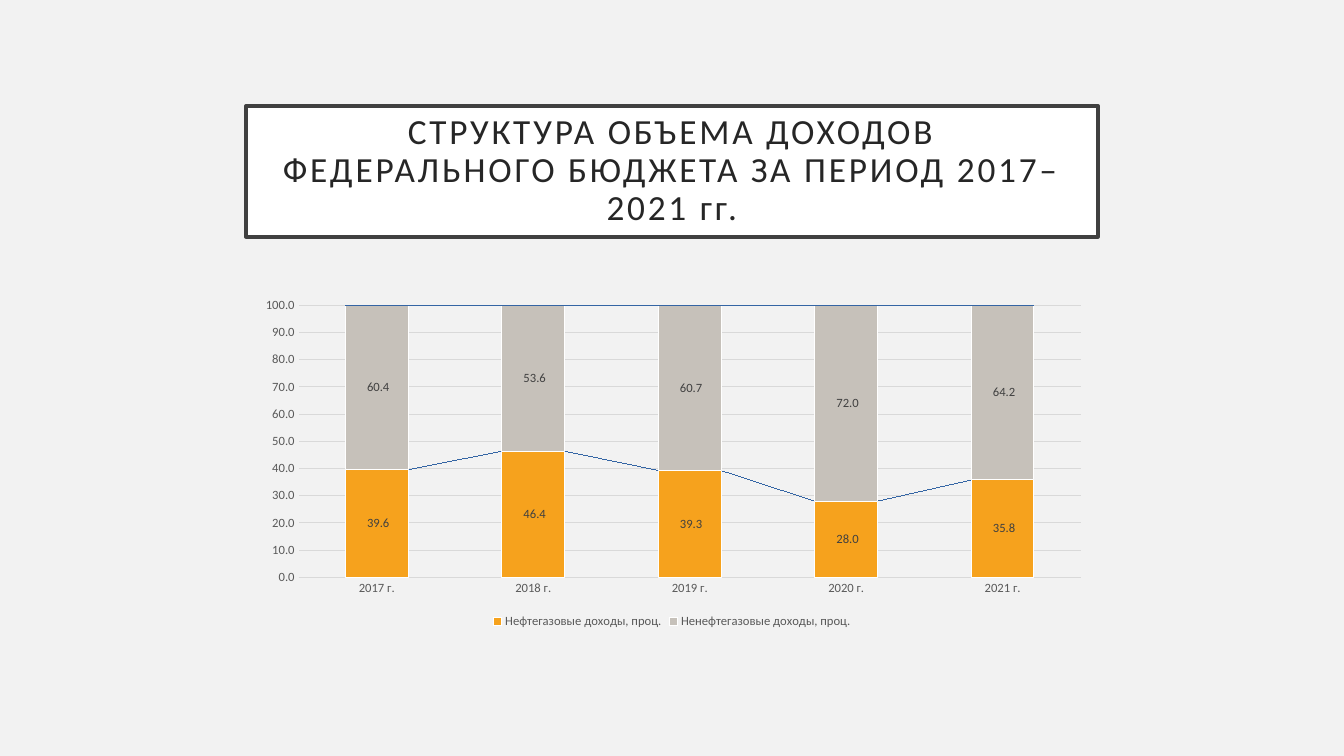
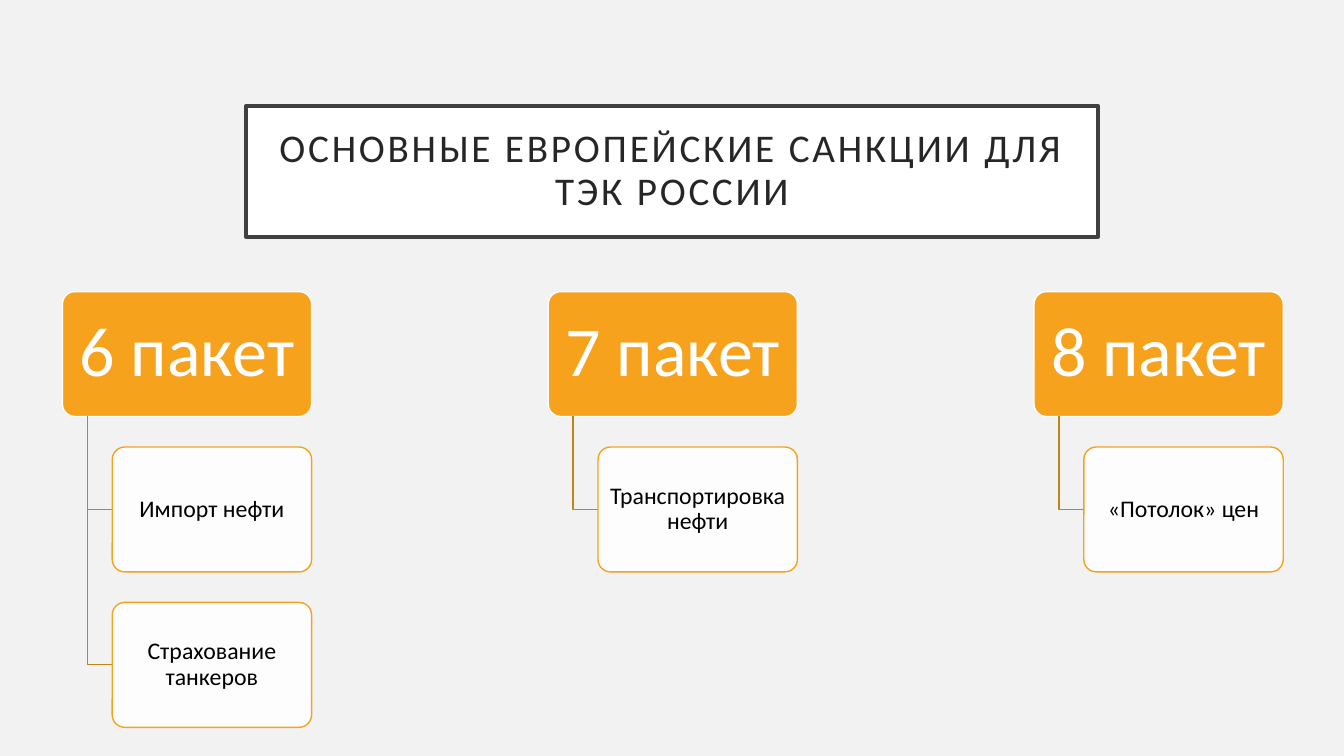
from lxml import etree
from pptx import Presentation
from pptx.chart.data import CategoryChartData
from pptx.dml.color import RGBColor
from pptx.enum.chart import XL_CHART_TYPE, XL_LABEL_POSITION, XL_LEGEND_POSITION, XL_TICK_MARK
from pptx.enum.shapes import MSO_SHAPE
from pptx.enum.text import MSO_ANCHOR, MSO_AUTO_SIZE, PP_ALIGN
from pptx.oxml.ns import qn
from pptx.util import Pt

STACKED = XL_CHART_TYPE.COLUMN_STACKED
LABEL_CENTER = XL_LABEL_POSITION.CENTER
LEGEND_BOTTOM = XL_LEGEND_POSITION.BOTTOM
NO_TICK = XL_TICK_MARK.NONE
ROUNDED = MSO_SHAPE.ROUNDED_RECTANGLE
MIDDLE = MSO_ANCHOR.MIDDLE
NO_AUTOFIT = MSO_AUTO_SIZE.NONE
CENTER = PP_ALIGN.CENTER

TITLE_ONLY = 5
FONT = "Calibri"
BACKGROUND, WHITE, BLACK = "F2F2F2", "FFFFFF", "000000"
ORANGE, STONE, BRANCH = "F6A21D", "C6C1BA", "C58217"
FRAME, TITLE_INK, AXIS_INK, GRID = "404040", "262626", "595959", "D9D9D9"
NUMBER_FORMAT = r"#\ ##0.0"


def rgb(hex_color):
    return RGBColor.from_string(hex_color)


def set_font(font, size, color):
    font.name = FONT
    font.size = Pt(size)
    font.color.rgb = rgb(color)


def set_line(line, color, width):
    line.color.rgb = rgb(color)
    line.width = Pt(width)


def write(shape, text, size, color, inset=(0, 0), tracking=0):
    """Fill the shape with centred text; inset is (horizontal, vertical), all in points."""
    frame = shape.text_frame
    frame.word_wrap = True
    frame.auto_size = NO_AUTOFIT
    frame.vertical_anchor = MIDDLE
    frame.margin_left = frame.margin_right = Pt(inset[0])
    frame.margin_top = frame.margin_bottom = Pt(inset[1])
    paragraph = frame.paragraphs[0]
    paragraph.alignment = CENTER
    paragraph.line_spacing = 0.9
    run = paragraph.add_run()
    run.text = text
    set_font(run.font, size, color)
    if tracking:
        run.font._element.set("spc", str(tracking * 100))


class Deck:
    """Holds the shared style and the slide being built; lengths are in points."""

    def __init__(self):
        self.prs = Presentation()
        self.prs.slide_width, self.prs.slide_height = Pt(960), Pt(540)
        fill = self.prs.slide_master.background.fill
        fill.solid()
        fill.fore_color.rgb = rgb(BACKGROUND)
        self.slide = None

    def add_slide(self, heading, size):
        self.slide = self.prs.slides.add_slide(self.prs.slide_layouts[TITLE_ONLY])
        title = self.slide.shapes.title
        title.left, title.top = Pt(175.7), Pt(75.6)
        title.width, title.height = Pt(608.6), Pt(93.6)
        title.fill.solid()
        title.fill.fore_color.rgb = rgb(WHITE)
        set_line(title.line, FRAME, 2.5)
        write(title, heading, size, TITLE_INK, inset=(14.4, 14.4), tracking=2)

    def card(self, left, top, width, height, fill, outline, opacity=100):
        card = self.slide.shapes.add_shape(ROUNDED, Pt(left), Pt(top), Pt(width), Pt(height))
        card.shadow.inherit = False
        card.adjustments[0] = 0.1
        card.fill.solid()
        card.fill.fore_color.rgb = rgb(fill)
        if opacity < 100:
            color = card.fill._xPr.find(qn("a:solidFill"))[0]
            etree.SubElement(color, qn("a:alpha")).set("val", str(opacity * 1000))
        set_line(card.line, outline, 1)
        return card

    def branch(self, left, top, right, bottom):
        """Draw a line down from (left, top) and then across to (right, bottom)."""
        builder = self.slide.shapes.build_freeform(Pt(left), Pt(top))
        corners = [(Pt(left), Pt(bottom)), (Pt(right), Pt(bottom))]
        builder.add_line_segments(corners, close=False)
        branch = builder.convert_to_shape()
        branch.shadow.inherit = False
        branch.fill.background()
        set_line(branch.line, BRANCH, 1)

    def stacked_chart(self, left, top, width, height, categories, series):
        """Draw shares as stacked columns; series holds (name, values, colour)."""
        data = CategoryChartData(number_format=NUMBER_FORMAT)
        data.categories = categories
        for name, values, _ in series:
            data.add_series(name, values)
        chart = self.slide.shapes.add_chart(
            STACKED, Pt(left), Pt(top), Pt(width), Pt(height), data).chart
        set_font(chart.font, 10, BLACK)
        chart.has_title = False
        chart.has_legend = True
        chart.legend.position = LEGEND_BOTTOM
        chart.legend.include_in_layout = False
        set_font(chart.legend.font, 9, AXIS_INK)

        for axis in (chart.category_axis, chart.value_axis):
            axis.major_tick_mark = axis.minor_tick_mark = NO_TICK
            set_font(axis.tick_labels.font, 9, AXIS_INK)
        set_line(chart.category_axis.format.line, GRID, 0.75)
        shares = chart.value_axis
        shares.minimum_scale, shares.maximum_scale, shares.major_unit = 0, 100, 10
        shares.tick_labels.number_format = NUMBER_FORMAT
        shares.tick_labels.number_format_is_linked = False
        shares.format.line.fill.background()
        set_line(shares.major_gridlines.format.line, GRID, 0.75)

        plot = chart.plots[0]
        plot.vary_by_categories = False
        plot.gap_width, plot.overlap = 150, 100
        overlap = plot._element.find(qn("c:overlap"))
        overlap.addnext(etree.Element(qn("c:serLines")))
        for bars, (_, _, color) in zip(plot.series, series):
            bars.format.fill.solid()
            bars.format.fill.fore_color.rgb = rgb(color)
            set_line(bars.format.line, WHITE, 0.75)
            labels = bars.data_labels
            labels.show_value = True
            labels.position = LABEL_CENTER
            labels.number_format = NUMBER_FORMAT
            labels.number_format_is_linked = False
            set_font(labels.font, 9, FRAME)


def revenue_slide(deck):
    deck.add_slide("СТРУКТУРА ОБЪЕМА ДОХОДОВ ФЕДЕРАЛЬНОГО БЮДЖЕТА ЗА ПЕРИОД 2017–2021 гг.", 25.2)
    deck.stacked_chart(
        175.7, 208, 608.6, 244,
        [f"{year} г." for year in range(2017, 2022)],
        [("Нефтегазовые доходы, проц.", (39.6, 46.4, 39.3, 28, 35.8), ORANGE),
         ("Ненефтегазовые доходы, проц.", (60.4, 53.6, 60.7, 72, 64.2), STONE)])


def sanctions_slide(deck):
    deck.add_slide("ОСНОВНЫЕ ЕВРОПЕЙСКИЕ САНКЦИИ ДЛЯ ТЭК РОССИИ", 28)
    packages = [("6 пакет", ["Импорт нефти", "Страхование танкеров"]),
                ("7 пакет", ["Транспортировка нефти"]),
                ("8 пакет", ["«Потолок» цен"])]
    first_left, column_step = 44.6, 347
    top, row_step = 208.3, 111
    package_width, measure_width, height = 178, 142.4, 89.2
    indent = package_width / 10

    for column, (package, measures) in enumerate(packages):
        left = first_left + column * column_step
        head = deck.card(left, top, package_width, height, ORANGE, WHITE)
        write(head, package, 50, WHITE, inset=(9.5, 7.5))
        measure_left = left + 2 * indent
        for row, measure in enumerate(measures, start=1):
            measure_top = top + row * row_step
            deck.branch(left + indent, top + height, measure_left, measure_top + height / 2)
            card = deck.card(measure_left, measure_top, measure_width, height,
                             WHITE, ORANGE, opacity=90)
            write(card, measure, 17, BLACK, inset=(5.4, 4))


def main():
    deck = Deck()
    revenue_slide(deck)
    sanctions_slide(deck)
    deck.prs.save("out.pptx")


if __name__ == "__main__":
    main()
